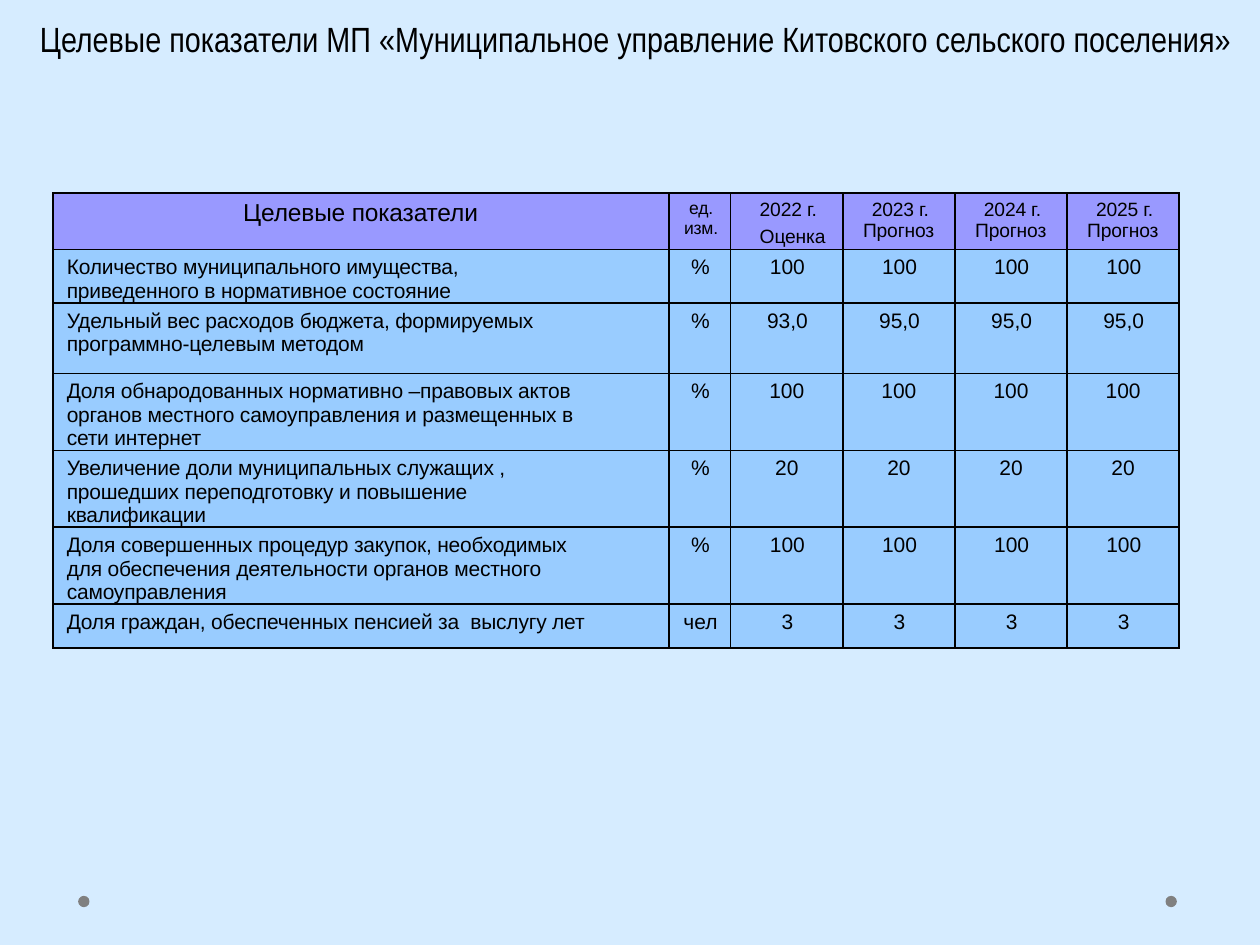
from lxml.etree import SubElement
from pptx import Presentation
from pptx.dml.color import RGBColor
from pptx.enum.shapes import MSO_SHAPE
from pptx.enum.text import MSO_ANCHOR, MSO_AUTO_SIZE, PP_ALIGN
from pptx.oxml.ns import qn
from pptx.util import Inches, Pt

TITLE = "Целевые показатели МП «Муниципальное управление Китовского сельского поселения»"
HEADER = ["Целевые показатели", "ед. изм.", "2022 г.\nОценка",
          "2023 г.\nПрогноз", "2024 г.\nПрогноз", "2025 г.\nПрогноз"]
INDICATORS = [
    ("Количество муниципального имущества, приведенного в нормативное состояние",
     "%", "100", "100", "100", "100"),
    ("Удельный вес расходов бюджета, формируемых программно-целевым методом",
     "%", "93,0", "95,0", "95,0", "95,0"),
    ("Доля обнародованных нормативно –правовых актов органов местного "
     "самоуправления и размещенных в сети интернет",
     "%", "100", "100", "100", "100"),
    ("Увеличение доли муниципальных служащих , прошедших переподготовку "
     "и повышение квалификации",
     "%", "20", "20", "20", "20"),
    ("Доля совершенных процедур закупок, необходимых для обеспечения "
     "деятельности органов местного самоуправления",
     "%", "100", "100", "100", "100"),
    ("Доля граждан, обеспеченных пенсией за  выслугу лет",
     "чел", "3", "3", "3", "3"),
]
SHIFTED_ROWS = (3, 4)
COLUMN_WIDTHS = [4.89, 0.49] + [0.89] * 4
ROW_HEIGHTS = [0.45, 0.42, 0.56, 0.61, 0.61, 0.61, 0.35]
TABLE_LEFT, TABLE_TOP = 0.42, 1.53
DOT_LEFTS, DOT_TOP, DOT_SIZE = (0.62, 9.25), 7.11, 0.09

BACKGROUND = RGBColor(0xD6, 0xEC, 0xFF)
HEADER_FILL = RGBColor(0x99, 0x99, 0xFF)
BODY_FILL = RGBColor(0x99, 0xCC, 0xFF)
BLACK = RGBColor(0, 0, 0)
GRAY = RGBColor(0x80, 0x80, 0x80)


def format_paragraph(paragraph, size, name="Arial", align=PP_ALIGN.LEFT,
                     left=0, first=0, before=0, spacing=0):
    paragraph.alignment = align
    paragraph.space_before = Pt(before)
    properties = paragraph._p.get_or_add_pPr()
    properties.set("marL", str(Inches(left)))
    properties.set("indent", str(Inches(first)))
    for run in paragraph.runs:
        run.font.size = Pt(size)
        run.font.name = name
        run.font.color.rgb = BLACK
        run._r.get_or_add_rPr().set("spc", str(spacing))


def add_borders(cell):
    properties = cell._tc.get_or_add_tcPr()
    for index, side in enumerate(("a:lnL", "a:lnR", "a:lnT", "a:lnB")):
        line = properties.makeelement(qn(side), {"w": str(Pt(1))})
        fill = SubElement(line, qn("a:solidFill"))
        SubElement(fill, qn("a:srgbClr"), val=str(BLACK))
        properties.insert(index, line)


def header_style(column, line):
    if column == 0:
        return dict(size=14, left=1.51, before=3.1, spacing=-10)
    if column == 1:
        return dict(size=10, left=0.12, first=0.04, before=3.3, spacing=-10)
    if line and column > 2:
        return dict(size=11, left=0.16, spacing=-10)
    return dict(size=11, left=0.23, before=3.2, spacing=-10)


def body_style(row, column):
    if column == 0:
        return dict(size=12, left=0.11, before=3.3, spacing=-10)
    shift = -0.22 if row in SHIFTED_ROWS and column > 1 else 0
    return dict(size=12, align=PP_ALIGN.CENTER, left=0.01, first=shift, before=3.3)


def add_title(slide):
    title = slide.shapes.title
    title.left, title.top, title.width, title.height = map(Inches, (0.17, 0.09, 9.75, 1.11))
    frame = title.text_frame
    frame.text = TITLE
    frame.word_wrap = True
    frame.auto_size = MSO_AUTO_SIZE.NONE
    frame.vertical_anchor = MSO_ANCHOR.TOP
    format_paragraph(frame.paragraphs[0], 20, "Arial Narrow", PP_ALIGN.CENTER)


def add_indicator_table(slide):
    rows = [HEADER] + INDICATORS
    table = slide.shapes.add_table(
        len(rows), len(HEADER), Inches(TABLE_LEFT), Inches(TABLE_TOP),
        Inches(sum(COLUMN_WIDTHS)), Inches(sum(ROW_HEIGHTS))).table
    for column, width in zip(table.columns, COLUMN_WIDTHS):
        column.width = Inches(width)
    for row, height in zip(table.rows, ROW_HEIGHTS):
        row.height = Inches(height)
    for row, texts in enumerate(rows):
        for column, text in enumerate(texts):
            cell = table.cell(row, column)
            cell.text_frame.text = text
            cell.margin_left = cell.margin_bottom = 0
            cell.margin_right = Inches(0.63) if row and column == 0 else 0
            cell.margin_top = Inches(0.05)
            cell.fill.solid()
            cell.fill.fore_color.rgb = BODY_FILL if row else HEADER_FILL
            add_borders(cell)
            for line, paragraph in enumerate(cell.text_frame.paragraphs):
                style = body_style(row, column) if row else header_style(column, line)
                format_paragraph(paragraph, **style)


def add_dots(slide):
    for left in DOT_LEFTS:
        dot = slide.shapes.add_shape(MSO_SHAPE.OVAL, Inches(left), Inches(DOT_TOP),
                                     Inches(DOT_SIZE), Inches(DOT_SIZE))
        dot.shadow.inherit = False
        dot.fill.solid()
        dot.fill.fore_color.rgb = GRAY
        dot.line.fill.background()


def main():
    """Build the slide with the programme's target indicators."""
    presentation = Presentation()
    presentation.slide_width, presentation.slide_height = Inches(10), Inches(7.5)
    slide = presentation.slides.add_slide(presentation.slide_layouts[5])
    slide.background.fill.solid()
    slide.background.fill.fore_color.rgb = BACKGROUND
    add_dots(slide)
    add_indicator_table(slide)
    add_title(slide)
    presentation.save("out.pptx")


if __name__ == "__main__":
    main()
